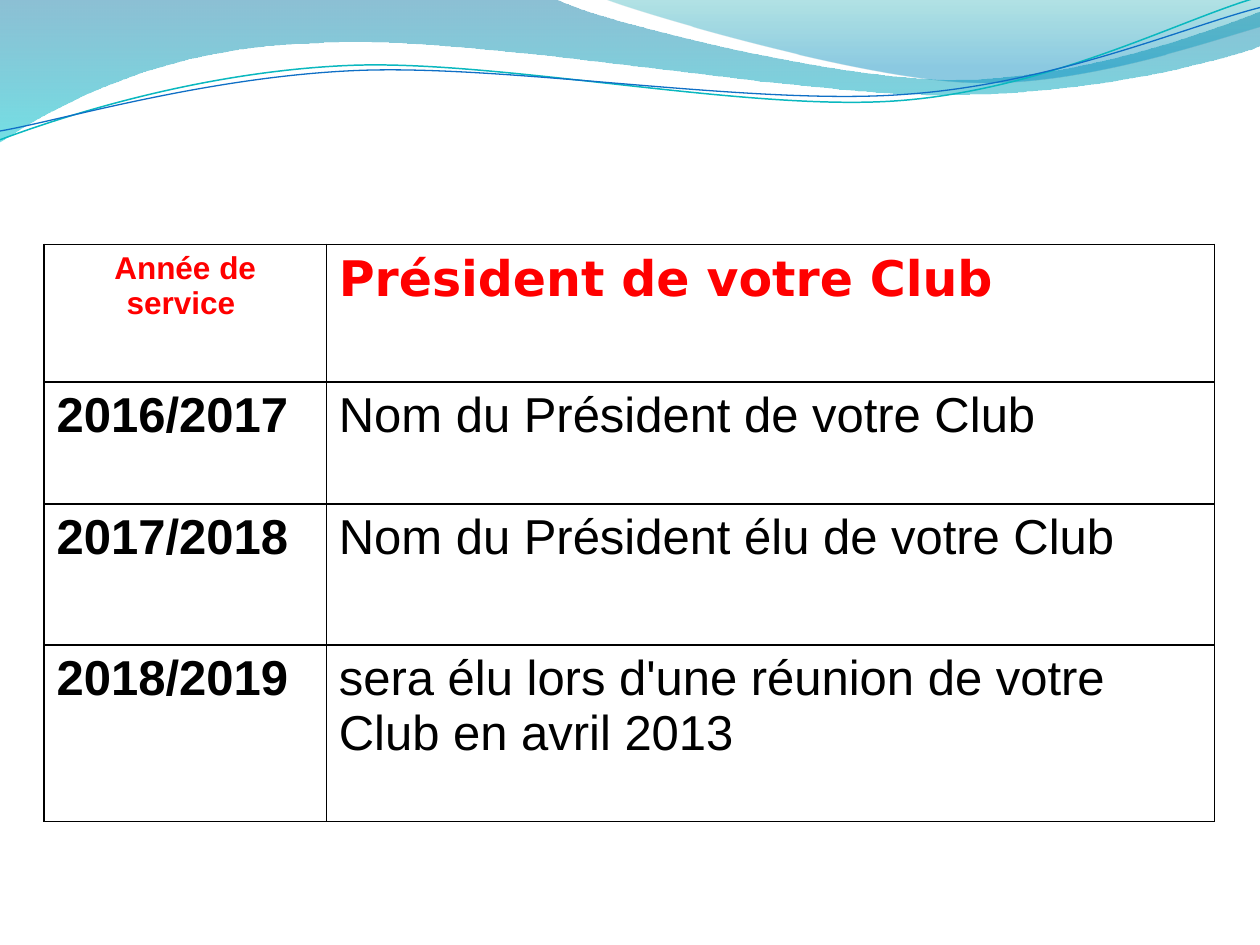
from lxml import etree
from pptx import Presentation
from pptx.dml.color import RGBColor
from pptx.enum.text import PP_ALIGN
from pptx.oxml.ns import qn
from pptx.util import Inches, Pt

CENTER, LEFT = PP_ALIGN.CENTER, PP_ALIGN.LEFT
COLORS = {
    "deep blue": "0074A1", "turquoise": "00C6CF",
    "teal": "00A1A9", "sky": "008BBF",
    "teal line": "0AB8BF", "blue line": "0F6FC6",
    "red": "FF0000", "black": "000000",
}


def rgb(name):
    return RGBColor.from_string(COLORS[name])


def add_wave(slide, start, segments, closed):
    """Segments hold one end point (line) or two controls and an end (curve)."""
    builder = slide.shapes.build_freeform(Inches(start[0]), Inches(start[1]))
    ends = [(Inches(segment[-2]), Inches(segment[-1])) for segment in segments]
    builder.add_line_segments(ends, close=closed)
    shape = builder.convert_to_shape()
    shape.shadow.inherit = False
    # Turn straight segments into Bézier curves where controls are given
    lines = list(shape._element.spPr.iter(qn("a:lnTo")))
    for line, segment in zip(lines, segments):
        if len(segment) == 6:
            curve = etree.Element(qn("a:cubicBezTo"))
            for x, y in zip(segment[::2], segment[1::2]):
                etree.SubElement(curve, qn("a:pt"), x=str(Inches(x) - shape.left),
                                 y=str(Inches(y) - shape.top))
            line.getparent().replace(line, curve)
    return shape


presentation = Presentation()
presentation.slide_width, presentation.slide_height = Inches(10), Inches(7.5)
slide = presentation.slides.add_slide(presentation.slide_layouts[6])

# Translucent bands: start, segments, gradient stops (position, colour, opacity)
bands = [
    ((0, 0),
     [(4.4, -0.01), (4.76, 0.17, 6.64, 0.63, 7.58, 0.63),
      (8.53, 0.63, 9.58, 0.26, 10, 0.09), (10.01, 0.36),
      (9.83, 0.44, 8.7, 0.76, 7.46, 0.75), (6.22, 0.75, 3.82, 0.28, 2.57, 0.34),
      (1.29, 0.36, 0.46, 0.83, -0.01, 1.13), (0, 0)],
     [(0, "deep blue", 45), (1, "turquoise", 55)]),
    ((4.79, -0.01),
     [(5.09, 0.11, 6.82, 0.62, 7.69, 0.65), (8.56, 0.69, 9.61, 0.32, 10, 0.21),
      (10, 0), (4.79, -0.01)],
     [(0, "teal", 30), (0.8, "sky", 45)]),
]
for start, segments, stops in bands:
    band = add_wave(slide, start, segments, True)
    band.line.fill.background()
    band.fill.gradient()
    band.fill.gradient_angle = 270
    for stop, (position, color, opacity) in zip(band.fill.gradient_stops, stops):
        stop.position = position
        stop.color.rgb = rgb(color)
    for element, (_, _, opacity) in zip(band._element.spPr.iter(qn("a:srgbClr")), stops):
        etree.SubElement(element, qn("a:alpha"), val=str(opacity * 1000))

# Thin wave lines
wave_lines = [
    ((0, 1.11),
     [(0.48, 0.93, 1.58, 0.57, 2.77, 0.52), (3.95, 0.47, 5.93, 0.89, 7.13, 0.8),
      (8.33, 0.71, 9.38, 0.15, 9.98, -0.02)], "teal line", 0.85),
    ((0, 1.04),
     [(0.47, 0.96, 1.64, 0.61, 2.83, 0.56), (4.03, 0.51, 5.97, 0.84, 7.17, 0.75),
      (8.36, 0.67, 9.41, 0.21, 10, 0.06)], "blue line", 0.75),
]
for start, segments, color, width in wave_lines:
    wave = add_wave(slide, start, segments, False)
    wave.fill.background()
    wave.line.color.rgb = rgb(color)
    wave.line.width = Pt(width)

# Table of presidents
rows = [
    ("Année de service ", "Président de votre Club"),
    ("2016/2017", "Nom du Président de votre Club"),
    ("2017/2018", "Nom du Président élu de votre Club"),
    ("2018/2019", "sera élu lors d'une réunion de votre Club en avril 2013"),
]
column_widths = [2.24, 7.05]
row_heights = [1.09, 0.97, 1.12, 1.4]
table = slide.shapes.add_table(
    len(rows), len(column_widths), Inches(0.35), Inches(1.94),
    Inches(sum(column_widths)), Inches(sum(row_heights))).table
table.first_row = table.horz_banding = False
for column, width in zip(table.columns, column_widths):
    column.width = Inches(width)
for row, height in zip(table.rows, row_heights):
    row.height = Inches(height)

for row_index, texts in enumerate(rows):
    for column_index, text in enumerate(texts):
        header, first = row_index == 0, column_index == 0
        cell = table.cell(row_index, column_index)
        cell.fill.background()
        paragraph = cell.text_frame.paragraphs[0]
        paragraph.alignment = CENTER if header and first else LEFT
        run = paragraph.add_run()
        run.text = text
        run.font.name = "DejaVu Sans" if header and not first else "Arial"
        run.font.size = Pt(18 if header and first else 28)
        run.font.bold = header or first
        run.font.color.rgb = rgb("red" if header else "black")

        # Black border on all four sides
        properties = cell._tc.get_or_add_tcPr()
        for index, side in enumerate(("a:lnL", "a:lnR", "a:lnT", "a:lnB")):
            border = etree.Element(qn(side), w=str(Pt(1)))
            fill = etree.SubElement(border, qn("a:solidFill"))
            etree.SubElement(fill, qn("a:srgbClr"), val=COLORS["black"])
            properties.insert(index, border)

presentation.save("out.pptx")
